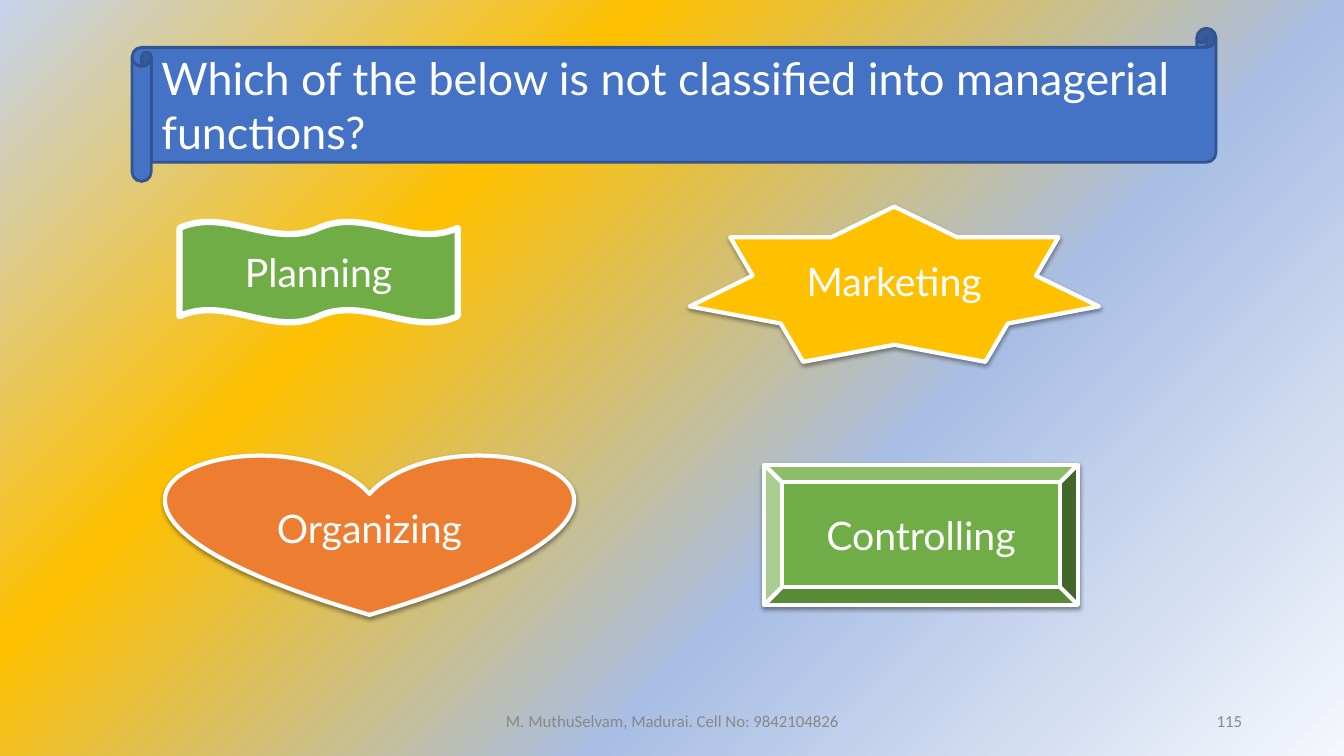
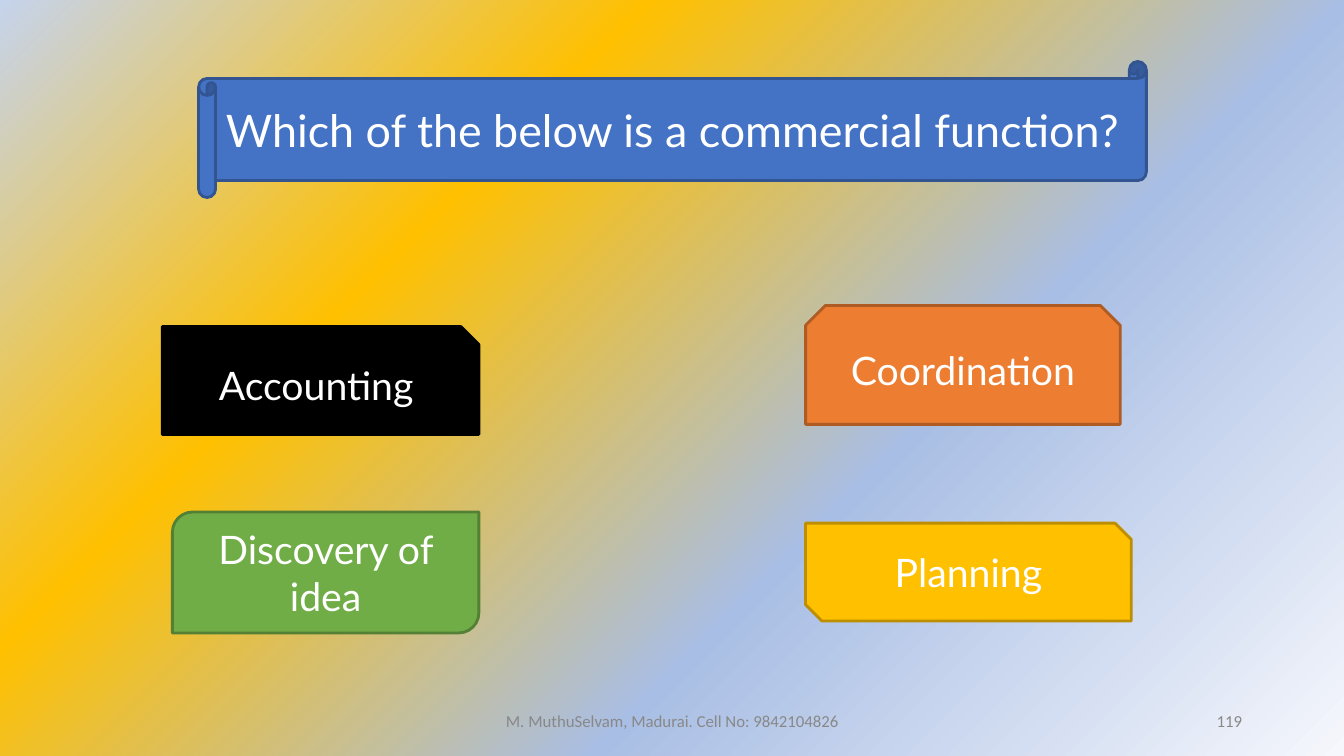
from dataclasses import dataclass

import pptx
import pptx.dml.color
import pptx.enum.shapes
import pptx.enum.text
import pptx.oxml
import pptx.oxml.ns
import pptx.util

SHAPE = pptx.enum.shapes.MSO_SHAPE
ALIGN = pptx.enum.text.PP_ALIGN
A_NS = pptx.oxml.ns.nsdecls("a")
PX = 9144  # EMU per px, 100 px to the inch

# Shared colours and text formats
WHITE, BLACK, GREY = "FFFFFF", "000000", "888888"
BLUE, DARK_BLUE = "4472C4", "325491"
GREEN, ORANGE, GOLD = "70AD47", "ED7D31", "FFC000"
BACKGROUND_STOPS = ((0, "F5F7FC"), (36, "A9BEE4"), (69, GOLD), (100, "C5D3ED"))
TITLE_FONT = {"name": "Lato", "size": pptx.util.Pt(32), "bold": False}
ANSWER_FONT = {"name": "Lato", "size": pptx.util.Pt(28)}
FOOTER_FONT = {"name": "Calibri", "size": pptx.util.Pt(12)}
FOOTER = "M. MuthuSelvam, Madurai. Cell No: 9842104826"


@dataclass(frozen=True)
class Box:
    x: int
    y: int
    w: int
    h: int

    def emu(self) -> tuple[int, ...]:
        return tuple(v * PX for v in (self.x, self.y, self.w, self.h))


@dataclass(frozen=True)
class Answer:
    text: str
    kind: SHAPE
    box: Box
    fill: str
    line: str = WHITE
    weight: float = 2
    shadow: bool = False


@dataclass(frozen=True)
class Question:
    text: str
    banner: Box
    number: str
    answers: tuple[Answer, ...]


QUESTIONS = (
    Question(
        "Which of the below is not classified into managerial functions?",
        Box(131, 28, 1075, 152),
        "115",
        (
            Answer("Organizing", SHAPE.HEART, Box(165, 450, 403, 160), ORANGE, weight=3, shadow=True),
            Answer("Marketing", SHAPE.STAR_7_POINT, Box(684, 205, 406, 154), GOLD, weight=3, shadow=True),
            Answer("Controlling", SHAPE.BEVEL, Box(758, 461, 311, 139), GREEN, weight=3, shadow=True),
            Answer("Planning", SHAPE.DOUBLE_WAVE, Box(178, 220, 276, 100), GREEN, weight=4.5),
        ),
    ),
    Question(
        "Which of the below is a commercial function?",
        Box(197, 61, 940, 135),
        "119",
        (
            Answer("Accounting", SHAPE.SNIP_1_RECTANGLE, Box(161, 324, 314, 107), BLACK, BLACK),
            Answer("Coordination", SHAPE.SNIP_2_SAME_RECTANGLE, Box(799, 303, 312, 118), ORANGE, "AF5C24"),
            Answer("Planning", SHAPE.SNIP_2_DIAG_RECTANGLE, Box(799, 519, 323, 97), GOLD, "BD8E00"),
            Answer("Discovery of idea", SHAPE.ROUND_2_DIAG_RECTANGLE, Box(171, 508, 304, 120), GREEN, "538035"),
        ),
    ),
)


def rgb(value: str) -> pptx.dml.color.RGBColor:
    return pptx.dml.color.RGBColor.from_string(value)


def write(sp, text: str, font: dict, color: str, align: ALIGN) -> None:
    """Put one middle-anchored, wrapped paragraph in a shape."""
    tf = sp.text_frame
    frame = {
        "word_wrap": True,
        "auto_size": pptx.enum.text.MSO_AUTO_SIZE.NONE,
        "vertical_anchor": pptx.enum.text.MSO_ANCHOR.MIDDLE,
    }
    for name, value in frame.items():
        setattr(tf, name, value)
    p = tf.paragraphs[0]
    p.alignment = align
    r = p.add_run()
    r.text = text
    for name, value in font.items():
        setattr(r.font, name, value)
    r.font.color.rgb = rgb(color)


def add_block(s, kind: SHAPE, box: Box, fill: str, line: str, weight: float):
    sp = s.shapes.add_shape(kind, *box.emu())
    sp.shadow.inherit = False
    sp.fill.solid()
    sp.fill.fore_color.rgb = rgb(fill)
    sp.line.color.rgb = rgb(line)
    sp.line.width = pptx.util.Pt(weight)
    return sp


def add_shadow(sp) -> None:
    effects = sp.element.spPr.find(pptx.oxml.ns.qn("a:effectLst"))
    effects.append(pptx.oxml.parse_xml(
        f'<a:outerShdw {A_NS} blurRad="39370" dist="20320" dir="5400000" rotWithShape="0">'
        f'<a:srgbClr val="{BLACK}"><a:alpha val="38000"/></a:srgbClr></a:outerShdw>'
    ))


def set_background(master) -> None:
    """Give every slide the diagonal gradient through the master."""
    master.background.fill.solid()
    bg = master.element.find(".//" + pptx.oxml.ns.qn("p:bgPr"))
    stops = "".join(
        f'<a:gs pos="{pos * 1000}"><a:srgbClr val="{color}"/></a:gs>'
        for pos, color in BACKGROUND_STOPS
    )
    bg.replace(bg[0], pptx.oxml.parse_xml(
        f'<a:gradFill {A_NS} rotWithShape="1"><a:gsLst>{stops}</a:gsLst>'
        '<a:path path="circle"><a:fillToRect l="100000" t="100000"/></a:path></a:gradFill>'
    ))


def add_title(s, text: str, banner: Box) -> None:
    scroll = add_block(s, SHAPE.HORIZONTAL_SCROLL, banner, BLUE, DARK_BLUE, 2)
    title = s.shapes.title
    title.element.addprevious(scroll.element)
    # The text sits inside the rolls, an eighth of the scroll's height
    roll = round(banner.h / 8)
    inner = Box(banner.x + roll, banner.y + roll, banner.w - roll, banner.h - 2 * roll)
    title.left, title.top, title.width, title.height = inner.emu()
    write(title, text, TITLE_FONT, WHITE, ALIGN.LEFT)


def add_answer(s, answer: Answer) -> None:
    sp = add_block(s, answer.kind, answer.box, answer.fill, answer.line, answer.weight)
    if answer.shadow:
        add_shadow(sp)
    write(sp, answer.text, ANSWER_FONT, WHITE, ALIGN.CENTER)


def add_footer(s, number: str) -> None:
    for text, box, align in (
        (FOOTER, Box(442, 695, 450, 40), ALIGN.CENTER),
        (number, Box(942, 695, 300, 40), ALIGN.RIGHT),
    ):
        write(s.shapes.add_textbox(*box.emu()), text, FOOTER_FONT, GREY, align)


def main() -> None:
    prs = pptx.Presentation()
    prs.slide_width, prs.slide_height = 1333 * PX, 750 * PX
    set_background(prs.slide_master)
    title_only = prs.slide_layouts.get_by_name("Title Only")
    for question in QUESTIONS:
        s = prs.slides.add_slide(title_only)
        add_title(s, question.text, question.banner)
        for answer in question.answers:
            add_answer(s, answer)
        add_footer(s, question.number)
    prs.save("out.pptx")


if __name__ == "__main__":
    main()
